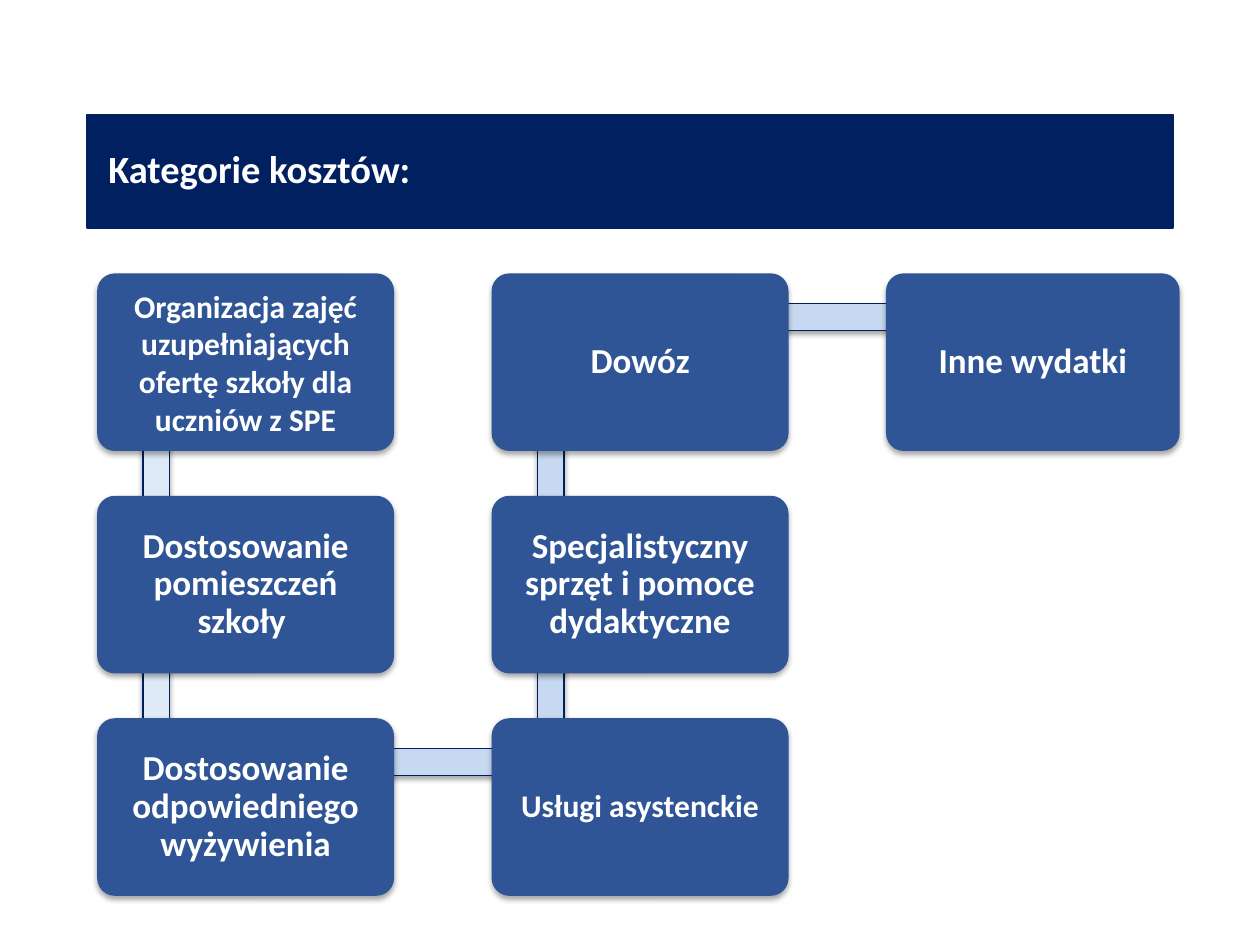
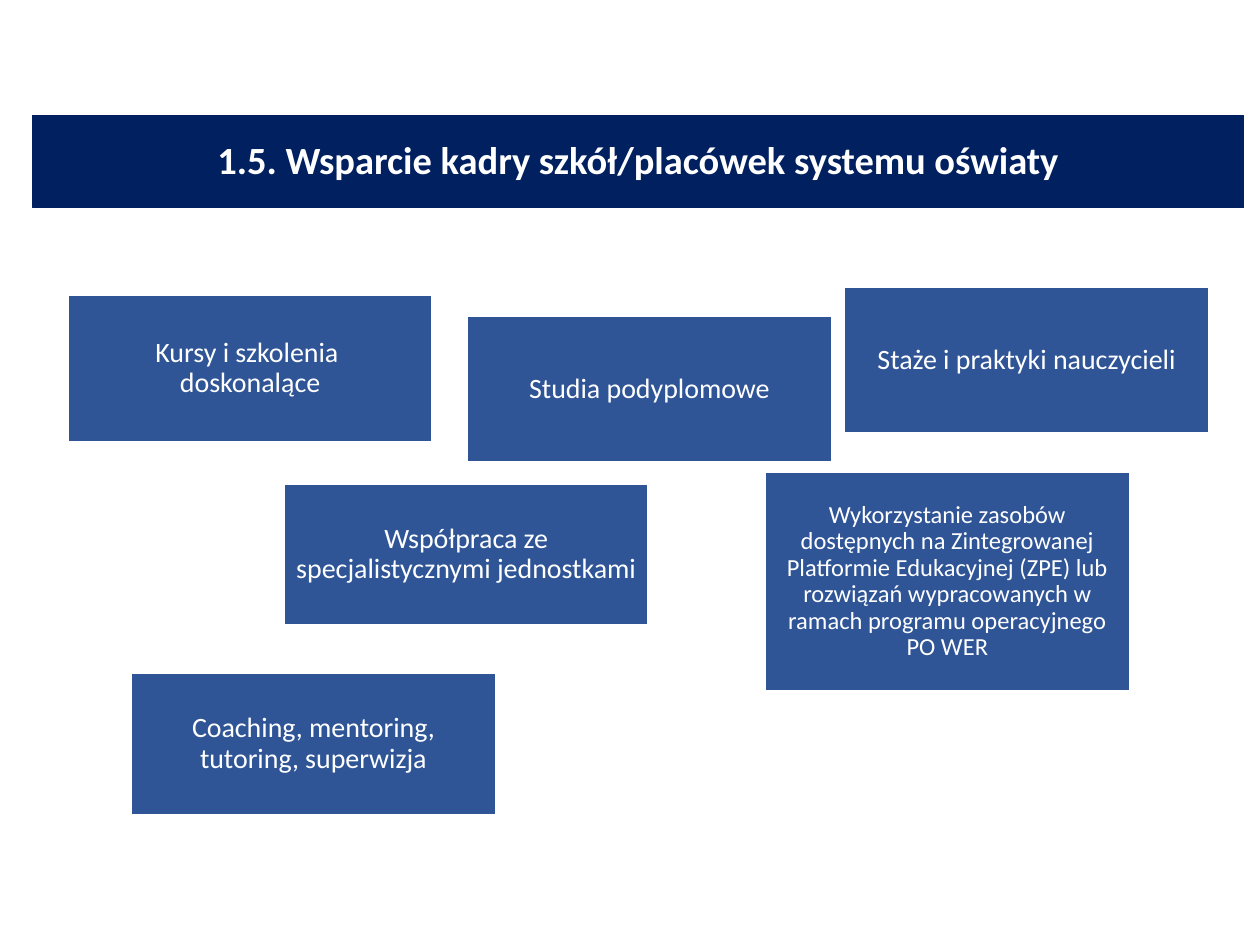
from lxml.etree import SubElement
from pptx import Presentation
from pptx.dml.color import RGBColor
from pptx.enum.shapes import MSO_SHAPE as Shape
from pptx.enum.text import MSO_ANCHOR as Anchor, MSO_AUTO_SIZE as AutoSize, PP_ALIGN as Align
from pptx.oxml.ns import qn
from pptx.util import Pt

FONT = "Calibri"
NAVY, BLUE, WHITE = "002060", "2F5597", "FFFFFF"
ICE, SKY = "DEEBF7", "C6D9F1"
TITLE_ONLY = 5

# Snake of cost categories: (column, row, text, size)
COSTS = [
    (0, 0, "Organizacja zajęć uzupełniających ofertę szkoły dla uczniów z SPE", 18),
    (0, 1, "Dostosowanie pomieszczeń szkoły ", 20),
    (0, 2, "Dostosowanie odpowiedniego wyżywienia", 20),
    (1, 2, "Usługi asystenckie", 18),
    (1, 1, "Specjalistyczny sprzęt i pomoce dydaktyczne", 20),
    (1, 0, "Dowóz", 20),
    (2, 0, "Inne wydatki", 20),
]
COST_LEFT, COST_TOP = 55.5, 156.2
COST_STEP_X, COST_STEP_Y = 225.4, 127.1
COST_WIDTH, COST_HEIGHT = 169.7, 101.5
BAR = 15.3

SUPPORT_WIDTH = 208.1
# Forms of staff support: (left, top, height, text, size)
SUPPORT = [
    (38.9, 168.8, 83.5, "Kursy i szkolenia \ndoskonalące", 16),
    (267.1, 180.9, 83.2, "Studia podyplomowe", 16),
    (482.6, 164.2, 83.2, "Staże i praktyki nauczycieli", 16),
    (162.4, 276.4, 80.8, "Współpraca ze specjalistycznymi jednostkami", 16),
    (437.3, 270, 124.6, "Wykorzystanie zasobów dostępnych na Zintegrowanej Platformie "
     "Edukacyjnej (ZPE) lub rozwiązań wypracowanych w ramach programu "
     "operacyjnego PO WER", 14),
    (75.1, 384.8, 80.8, "Coaching, mentoring, tutoring, superwizja", 16),
]


def color(value):
    return RGBColor.from_string(value)


class Deck:
    def __init__(self):
        self.file = Presentation()
        self.file.slide_width, self.file.slide_height = Pt(720), Pt(540)
        self.page = None

    def paint(self, box, fill, line=None, width=0.75):
        box.fill.solid()
        box.fill.fore_color.rgb = color(fill)
        if line:
            box.line.color.rgb = color(line)
            box.line.width = Pt(width)
        else:
            box.line.fill.background()

    def add_text(self, box, text, size, bold, margin, align=Align.CENTER, spacing=0.9):
        frame = box.text_frame
        frame.word_wrap = True
        frame.auto_size = AutoSize.NONE
        frame.vertical_anchor = Anchor.MIDDLE
        frame.margin_left = frame.margin_right = Pt(margin)
        frame.margin_top = frame.margin_bottom = Pt(0.3 * size)
        para = frame.paragraphs[0]
        para.alignment = align
        para.line_spacing = spacing
        for number, line in enumerate(text.split("\n")):
            if number:
                para.add_line_break()
            span = para.add_run()
            span.text = line
            span.font.name = FONT
            span.font.size = Pt(size)
            span.font.bold = bold
            span.font.color.rgb = color(WHITE)

    def add_page(self, title, left, top, width, height, align, margin=7.2):
        """Start a slide with a navy title band."""
        self.page = self.file.slides.add_slide(self.file.slide_layouts[TITLE_ONLY])
        band = self.page.shapes.title
        band.left, band.top, band.width, band.height = map(Pt, (left, top, width, height))
        self.paint(band, NAVY, NAVY)
        self.add_text(band, title, 22, True, margin, align)

    def add_block(self, kind, left, top, width, height):
        box = self.page.shapes.add_shape(kind, *map(Pt, (left, top, width, height)))
        box.shadow.inherit = False
        return box

    def cast_shadow(self, box):
        effects = box.element.spPr.find(qn("a:effectLst"))
        shadow = SubElement(effects, qn("a:outerShdw"), blurRad=str(Pt(3.1)),
                            dist=str(Pt(1.8)), dir="5400000", rotWithShape="0")
        black = SubElement(shadow, qn("a:srgbClr"), val="000000")
        SubElement(black, qn("a:alpha"), val="35000")

    def add_bar(self, left, top, width, height, fill):
        bar = self.add_block(Shape.RECTANGLE, left, top, width, height)
        self.paint(bar, fill, NAVY)
        self.cast_shadow(bar)

    def add_cost(self, left, top, width, text, size):
        card = self.add_block(Shape.ROUNDED_RECTANGLE, left, top, width, COST_HEIGHT)
        card.adjustments[0] = 0.1
        self.paint(card, BLUE)
        self.cast_shadow(card)
        spacing = 1 if text == COSTS[0][2] else 0.9
        self.add_text(card, text, size, True, 0.3 * size, spacing=spacing)

    def add_support(self, left, top, height, text, size):
        card = self.add_block(Shape.RECTANGLE, left, top, SUPPORT_WIDTH, height)
        self.paint(card, BLUE, WHITE, 1)
        self.add_text(card, text, size, False, 0.3 * size)


def cost_corner(column, row):
    return COST_LEFT + column * COST_STEP_X, COST_TOP + row * COST_STEP_Y


def build_costs(deck):
    deck.add_page("Kategorie kosztów:", 49.7, 65.5, 620.6, 64.8, Align.LEFT, 12.2)
    for (column, row, *_), (next_column, next_row, *_) in zip(COSTS, COSTS[1:]):
        left, top = cost_corner(column, min(row, next_row))
        if column == next_column:
            deck.add_bar(left + 26.2, top + 24.7, BAR, COST_STEP_Y,
                         SKY if column else ICE)
        else:
            deck.add_bar(left + 34.5, top + 17.3, COST_STEP_X, BAR, SKY)
    for column, row, text, size in COSTS:
        width = COST_WIDTH if column < 2 else 167.8
        deck.add_cost(*cost_corner(column, row), width, text, size)


def build_support(deck):
    deck.add_page("1.5. Wsparcie kadry szkół/placówek systemu oświaty",
                  18.7, 66.2, 691.9, 52.6, Align.CENTER)
    for card in SUPPORT:
        deck.add_support(*card)


def main():
    deck = Deck()
    build_costs(deck)
    build_support(deck)
    deck.file.save("out.pptx")


if __name__ == "__main__":
    main()
